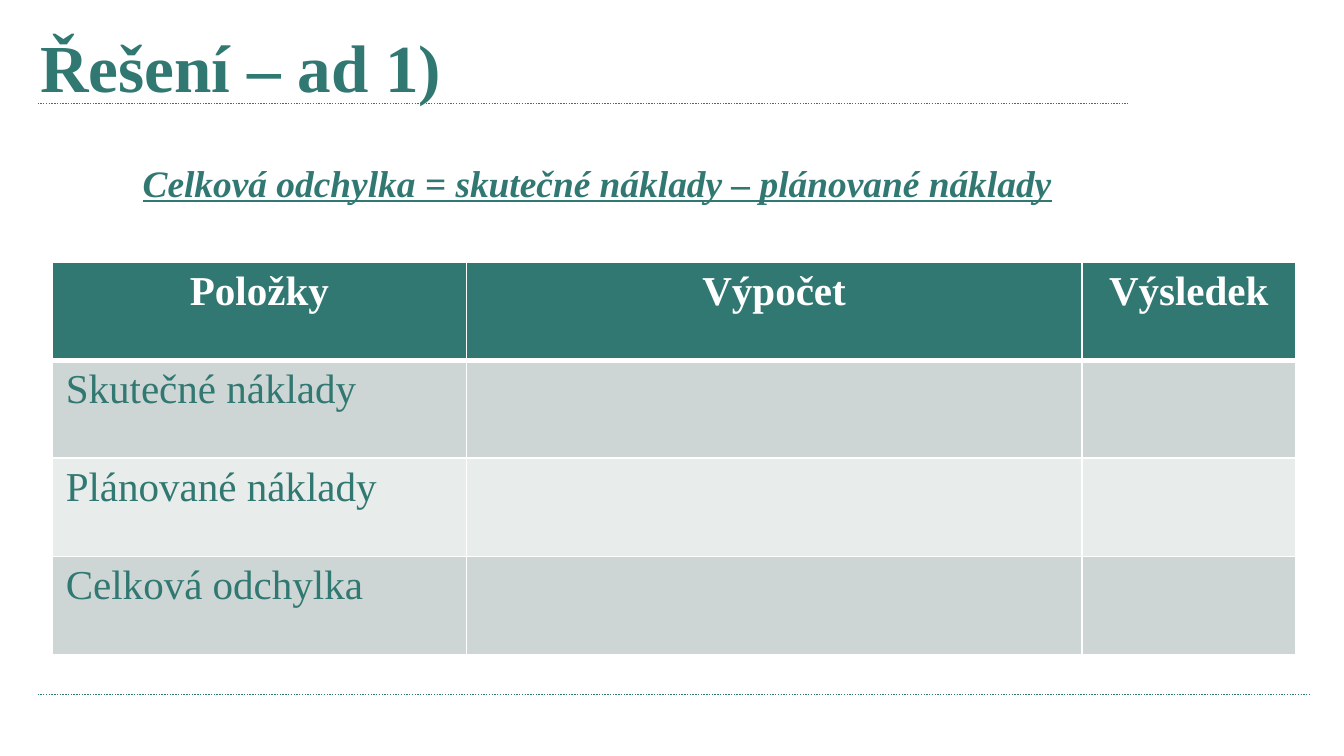
"""Build the cost variance slide with its heading, formula and table."""
from lxml.etree import SubElement
from pptx import Presentation
from pptx.dml.color import RGBColor as RGB
from pptx.enum.dml import MSO_LINE as Dash
from pptx.enum.shapes import MSO_CONNECTOR as Conn
from pptx.enum.text import MSO_ANCHOR as Anchor, PP_ALIGN as Align
from pptx.oxml.ns import qn
from pptx.util import Inches, Pt

TEAL = RGB(0x30, 0x78, 0x71)
WHITE = RGB(0xFF, 0xFF, 0xFF)
GRAY = RGB(0xCD, 0xD6, 0xD5)
PALE = RGB(0xE8, 0xEC, 0xEB)

FACE = "Times New Roman"
TITLE = {"size": Pt(36), "bold": True}
RULE = {"size": Pt(20), "bold": True, "italic": True, "underline": True}
HEAD = {"size": Pt(22), "bold": True}
BODY = {"size": Pt(22), "bold": False}

COLS = [3.08, 4.58, 1.59]
ROW = 0.73
ROWS = [
    ["Položky", "Výpočet", "Výsledek"],
    ["Skutečné náklady", "", ""],
    ["Plánované náklady", "", ""],
    ["Celková odchylka", "", ""],
]


def write(frame, text, form, color, align=Align.LEFT):
    para = frame.paragraphs[0]
    para.alignment = align
    font = para.font
    if text:
        run = para.add_run()
        run.text = text
        font = run.font
    font.name = FACE
    font.color.rgb = color
    for key, value in form.items():
        setattr(font, key, value)


def add_text(slide, box, text, form, align, top=0.05):
    frame = slide.shapes.add_textbox(*map(Inches, box)).text_frame
    frame.word_wrap = True
    frame.vertical_anchor = Anchor.TOP
    frame.margin_top = Inches(top)
    write(frame, text, form, TEAL, align)


def add_line(slide, left, right, y):
    ends = map(Inches, (left, y, right, y))
    line = slide.shapes.add_connector(Conn.STRAIGHT, *ends)
    line.line.color.rgb = TEAL
    line.line.width = Pt(0.75)
    line.line.dash_style = Dash.ROUND_DOT
    SubElement(line._element.spPr, qn("a:effectLst"))


def add_edges(cell, top, bottom):
    props = cell._tc.get_or_add_tcPr()
    sides = {"lnL": 1, "lnR": 1, "lnT": top, "lnB": bottom}
    for spot, (side, width) in enumerate(sides.items()):
        edge = SubElement(props, qn(f"a:{side}"), w=str(Pt(width)))
        fill = SubElement(edge, qn("a:solidFill"))
        SubElement(fill, qn("a:srgbClr"), val=str(WHITE))
        props.insert(spot, edge)


def add_grid(slide, left, top):
    size = map(Inches, (left, top, sum(COLS), ROW * len(ROWS)))
    table = slide.shapes.add_table(len(ROWS), len(COLS), *size).table
    for col, width in zip(table.columns, COLS):
        col.width = Inches(width)
    for r, texts in enumerate(ROWS):
        table.rows[r].height = Inches(ROW)
        if r == 0:
            fill, form, color, align = TEAL, HEAD, WHITE, Align.CENTER
        else:
            fill = GRAY if r % 2 else PALE
            form, color, align = BODY, TEAL, Align.LEFT
        for c, text in enumerate(texts):
            cell = table.cell(r, c)
            cell.fill.solid()
            cell.fill.fore_color.rgb = fill
            add_edges(cell, 3 if r == 1 else 1, 3 if r == 0 else 1)
            write(cell.text_frame, text, form, color, align)


def main():
    deck = Presentation()
    deck.slide_width = Inches(10)
    deck.slide_height = Inches(10) * 9 // 16
    slide = deck.slides.add_slide(deck.slide_layouts[6])
    add_line(slide, 0.28, 8.39, 0.77)
    add_line(slide, 0.28, 9.75, 5.17)
    add_text(slide, (0.2, 0.14, 8.82, 0.79), "Řešení – ad 1)",
             TITLE, Align.LEFT)
    add_text(slide, (0.39, 0.84, 8.11, 1.35),
             "Celková odchylka = skutečné náklady – plánované náklady",
             RULE, Align.CENTER, 0.35)
    add_grid(slide, 0.39, 1.95)
    deck.save("out.pptx")


if __name__ == "__main__":
    main()
